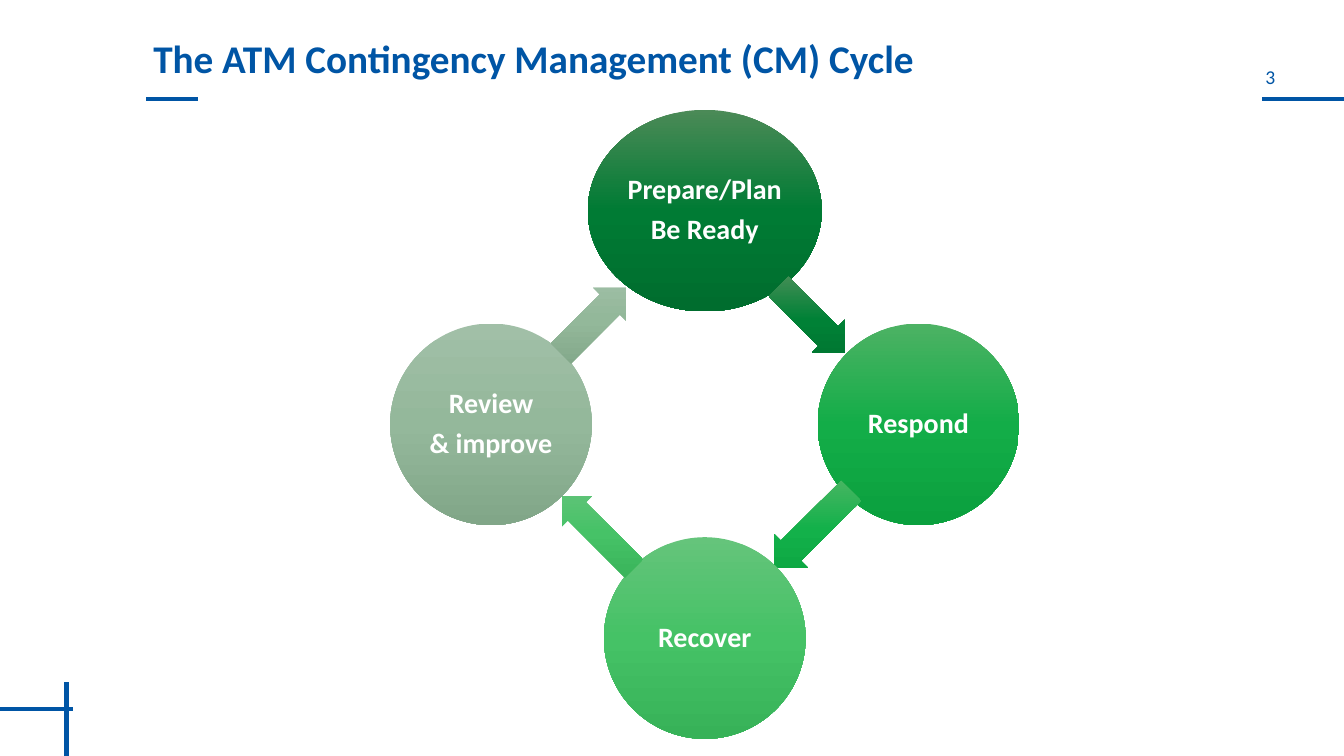
import copy
import math
from dataclasses import dataclass

from lxml import etree
from pptx import Presentation
from pptx import util as u
from pptx.dml.color import RGBColor
from pptx.enum import shapes, text
from pptx.oxml.ns import qn

PX = 9144  # 100 px to the inch


@dataclass(frozen=True)
class Theme:
    font: str = "Calibri"
    blue: str = "0055A5"
    white: str = "FFFFFF"
    title_size: int = 28
    stage_size: int = 20
    number_size: int = 14
    rule_width: int = 3


theme = Theme()


def write_text(shape, content, size, color, bold=False, align=text.PP_ALIGN.CENTER,
               inset=0, wrap=True, line_spacing=1.0, space_after=0):
    frame = shape.text_frame
    frame.text = content
    frame.word_wrap = wrap
    frame.auto_size = text.MSO_AUTO_SIZE.NONE
    frame.vertical_anchor = text.MSO_ANCHOR.MIDDLE
    frame.margin_left = frame.margin_right = inset * PX
    frame.margin_top = frame.margin_bottom = inset * PX
    for paragraph in frame.paragraphs:
        paragraph.alignment = align
        paragraph.line_spacing = line_spacing
        paragraph.space_after = u.Pt(space_after)
        for run in paragraph.runs:
            run.font.name = theme.font
            run.font.size = u.Pt(size)
            run.font.bold = bold
            run.font.color.rgb = RGBColor.from_string(color)


def add_gradient_shape(kind, center_x, center_y, width, height, colors):
    """Add a centred shape, shaded from top to bottom of the slide."""
    shape = slide.shapes.add_shape(
        kind, round((center_x - width / 2) * PX), round((center_y - height / 2) * PX),
        width * PX, height * PX)
    shape.shadow.inherit = False
    shape.line.fill.background()
    shape.fill.gradient()
    shape.fill.gradient_angle = 270
    gradient = shape.element.spPr.find(qn("a:gradFill"))
    gradient.set("rotWithShape", "0")
    stop_list = gradient.find(qn("a:gsLst"))
    stop_list.append(copy.deepcopy(stop_list[-1]))
    for stop, position, color in zip(shape.fill.gradient_stops, (0, 0.5, 1), colors):
        stop.position = position
        stop.color.rgb = RGBColor.from_string(color)
    return shape


presentation = Presentation()
presentation.slide_width = 1333 * PX
presentation.slide_height = 750 * PX
slide = presentation.slides.add_slide(presentation.slide_layouts[5])

# Rules beside the title, the slide number and the lower left corner
for rule in [(1252, 98, 1333, 98), (66, 677, 66, 750),
             (145, 98, 196, 98), (72, 703, 0, 703)]:
    connector = slide.shapes.add_connector(
        shapes.MSO_CONNECTOR.STRAIGHT, *(value * PX for value in rule))
    connector.line.color.rgb = RGBColor.from_string(theme.blue)
    connector.line.width = u.Pt(theme.rule_width)
    etree.SubElement(connector.element.spPr, qn("a:effectLst"))

title = slide.shapes.title
title.left, title.top, title.width, title.height = (
    value * PX for value in (142, 37, 1022, 46))
write_text(title, "The ATM Contingency Management (CM) Cycle", theme.title_size,
           theme.blue, bold=True, align=text.PP_ALIGN.LEFT, inset=10, line_spacing=0.9)

number = slide.shapes.add_textbox(1200 * PX, 64 * PX, 120 * PX, 33 * PX)
write_text(number, "3", theme.number_size, theme.blue, wrap=False)
number.text_frame.vertical_anchor = text.MSO_ANCHOR.TOP

# Stages run clockwise from the top; each has an arrow to the next one
CYCLE_X, CYCLE_Y, RADIUS, DIAMETER = 699, 421, 212, 200
stages = [
    ("Prepare/Plan\nBe Ready", 232, ("4B8A57", "007B34", "006D2E"),
     (805, 317, 93, 46), ("4B8F59", "008136", "007330")),
    ("Respond", DIAMETER, ("4DB264", "13AD48", "0BA03E"),
     (806, 525, 108, 47), ("4DB665", "13B14A", "0BA440")),
    ("Recover", DIAMETER, ("65C47B", "45C266", "37B258"),
     (593, 528, 101, 42), ("66C47C", "46C267", "38B359")),
    ("Review\n& improve", DIAMETER, ("A1BFA7", "94B89B", "81A688"),
     (589, 318, 92, 47), ("A1BFA7", "93B89A", "81A688")),
]
for index, (label, width, colors, arrow_box, arrow_colors) in enumerate(stages):
    angle = math.radians(90 * index - 90)
    stage = add_gradient_shape(
        shapes.MSO_SHAPE.OVAL, CYCLE_X + RADIUS * math.cos(angle),
        CYCLE_Y + RADIUS * math.sin(angle), width, DIAMETER, colors)
    write_text(stage, label, theme.stage_size, theme.white, bold=True, inset=3,
               line_spacing=0.9, space_after=7)

    arrow = add_gradient_shape(shapes.MSO_SHAPE.RIGHT_ARROW, *arrow_box, arrow_colors)
    arrow.adjustments[0] = 0.6
    arrow.adjustments[1] = 0.5
    arrow.rotation = 45 + 90 * index

presentation.save("out.pptx")
